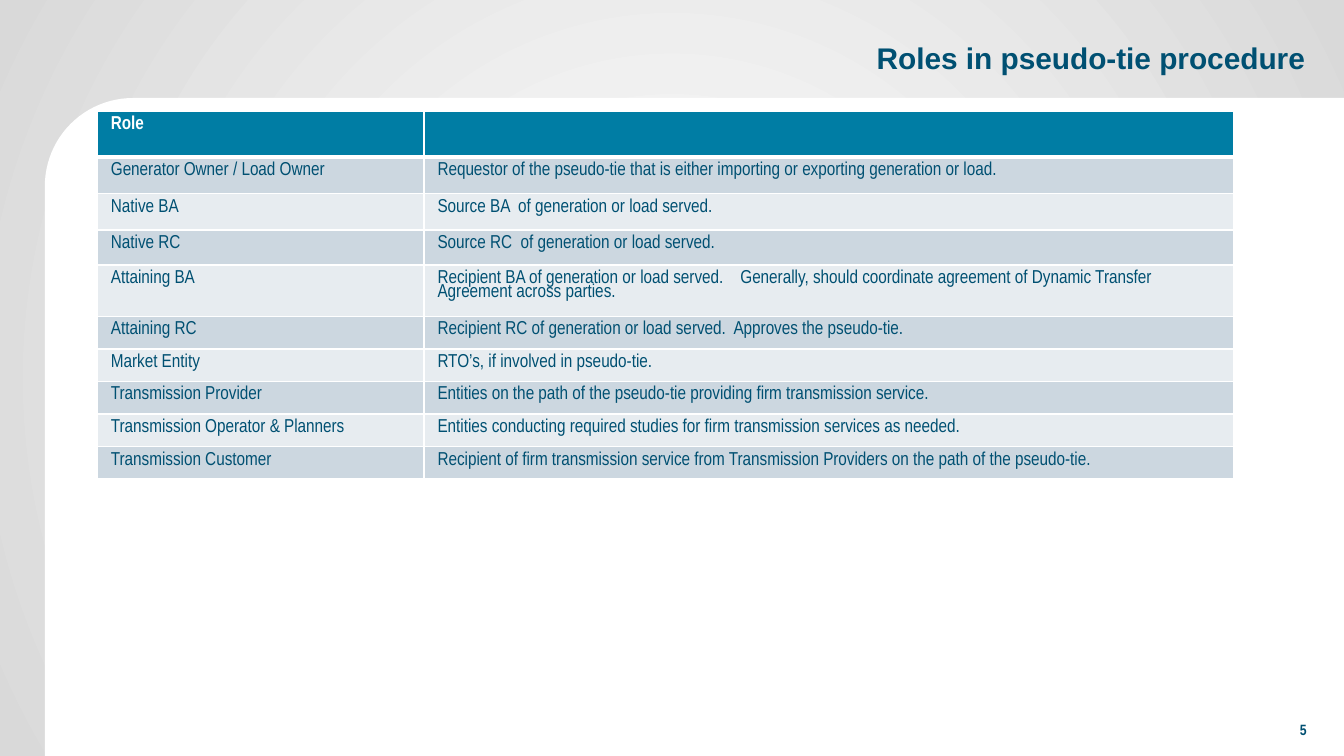
from lxml.etree import SubElement
from pptx import Presentation
from pptx.dml.color import RGBColor
from pptx.enum.shapes import MSO_SHAPE
from pptx.enum.text import MSO_ANCHOR, PP_ALIGN
from pptx.oxml.ns import qn
from pptx.util import Pt

WHITE = RGBColor(0xFF, 0xFF, 0xFF)
GRAY = RGBColor(0xD9, 0xD9, 0xD9)
NAVY = RGBColor(0x00, 0x50, 0x72)
TEAL = RGBColor(0x00, 0x7D, 0xA4)
DARK_BAND = RGBColor(0xCC, 0xD7, 0xE0)
LIGHT_BAND = RGBColor(0xE7, 0xEC, 0xF0)

ROLES = [
    ("Role", ""),
    ("Generator Owner / Load Owner",
     "Requestor of the pseudo-tie that is either importing or exporting generation or load."),
    ("Native BA", "Source BA  of generation or load served."),
    ("Native RC", "Source RC  of generation or load served."),
    ("Attaining BA",
     "Recipient BA of generation or load served.    Generally, should coordinate "
     "agreement of Dynamic Transfer Agreement across parties."),
    ("Attaining RC", "Recipient RC of generation or load served.  Approves the pseudo-tie."),
    ("Market Entity", "RTO’s, if involved in pseudo-tie."),
    ("Transmission Provider",
     "Entities on the path of the pseudo-tie providing firm transmission service."),
    ("Transmission Operator & Planners",
     "Entities conducting required studies for firm transmission services as needed."),
    ("Transmission Customer",
     "Recipient of firm transmission service from Transmission Providers "
     "on the path of the pseudo-tie."),
]
ROW_HEIGHTS = [24.5, 19.6, 19.6, 18.6, 26] + [16.4] * 5
COLUMN_WIDTHS = [175, 434]


def write_text(text_frame, text, line_spacing, alignment, **font_format):
    text_frame.word_wrap = True
    paragraph = text_frame.paragraphs[0]
    paragraph.alignment = alignment
    paragraph.line_spacing = line_spacing
    color = font_format.pop("color")
    font = paragraph.font
    if text:
        run = paragraph.add_run()
        run.text = text
        font = run.font
    for name, value in font_format.items():
        setattr(font, name, value)
    font.color.rgb = color


def add_border(cell, side, width):
    """Draw a white line on one side (L, R, T or B) of a cell."""
    properties = cell._tc.get_or_add_tcPr()
    line = SubElement(properties, qn(f"a:ln{side}"), w=str(Pt(width)))
    fill = SubElement(line, qn("a:solidFill"))
    SubElement(fill, qn("a:srgbClr"), val=str(WHITE))


presentation = Presentation()
presentation.slide_width = Pt(720)
presentation.slide_height = Pt(405)
slide = presentation.slides.add_slide(presentation.slide_layouts[6])

# Radial background
background = slide.background.fill
background.gradient()
for stop, color in zip(background.gradient_stops, (WHITE, GRAY)):
    stop.color.rgb = color
gradient = slide.element.find(".//" + qn("a:gradFill"))
gradient.remove(gradient.find(qn("a:lin")))
radial = SubElement(gradient, qn("a:path"), path="circle")
SubElement(radial, qn("a:fillToRect"), l="50000", t="50000", r="50000", b="50000")

# White content panel, rounded at its top left
panel = slide.shapes.add_shape(
    MSO_SHAPE.ROUND_1_RECTANGLE, Pt(24), Pt(52.5), Pt(696), Pt(352.5))
panel.adjustments[0] = 0.134
panel.element.spPr.find(qn("a:xfrm")).set("flipH", "1")
panel.shadow.inherit = False
panel.fill.solid()
panel.fill.fore_color.rgb = WHITE
panel.line.fill.background()

# Title and slide number
title = slide.shapes.add_textbox(Pt(32.4), Pt(13.5), Pt(674), Pt(37.5))
title.text_frame.vertical_anchor = MSO_ANCHOR.MIDDLE
write_text(title.text_frame, "Roles in pseudo-tie procedure", 0.85, PP_ALIGN.RIGHT,
           name="Arial", size=Pt(16), bold=True, color=NAVY)
number = slide.shapes.add_textbox(Pt(539.3), Pt(382.3), Pt(167.8), Pt(28))
write_text(number.text_frame, "5", 1.0, PP_ALIGN.RIGHT,
           name="Arial Narrow", size=Pt(8), bold=True, color=NAVY)

# Roles table
table = slide.shapes.add_table(
    len(ROLES), len(COLUMN_WIDTHS), Pt(52.2), Pt(59.6),
    Pt(sum(COLUMN_WIDTHS)), Pt(sum(ROW_HEIGHTS))).table
for column, width in zip(table.columns, COLUMN_WIDTHS):
    column.width = Pt(width)
for row_index, (row, height, texts) in enumerate(zip(table.rows, ROW_HEIGHTS, ROLES)):
    row.height = Pt(height)
    is_header = row_index == 0
    band = TEAL if is_header else DARK_BAND if row_index % 2 else LIGHT_BAND
    for cell, text in zip(row.cells, texts):
        for side in "LRTB":
            thick = (is_header and side == "B") or (row_index == 1 and side == "T")
            add_border(cell, side, 3 if thick else 1)
        cell.fill.solid()
        cell.fill.fore_color.rgb = band
        write_text(cell.text_frame, text, 0.85, PP_ALIGN.LEFT,
                   name="Arial Narrow", size=Pt(10), bold=is_header,
                   color=WHITE if is_header else NAVY)

presentation.save("out.pptx")
